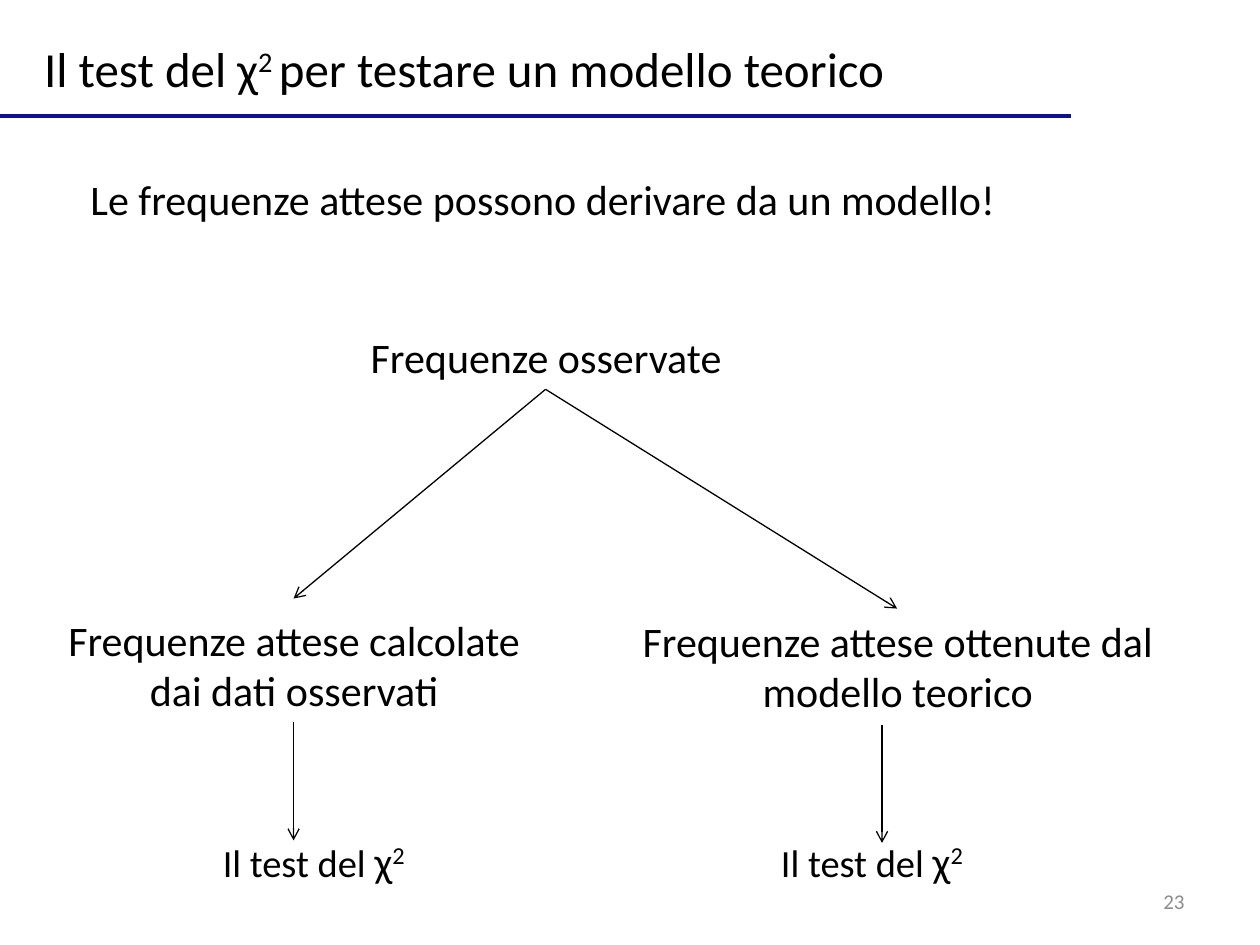
from dataclasses import dataclass

from lxml import etree
from pptx import Presentation
from pptx.dml.color import RGBColor
from pptx.enum.shapes import MSO_CONNECTOR
from pptx.enum.text import MSO_ANCHOR, MSO_AUTO_SIZE, PP_ALIGN
from pptx.oxml.ns import qn
from pptx.util import Inches, Pt

LEFT, CENTER, RIGHT = PP_ALIGN.LEFT, PP_ALIGN.CENTER, PP_ALIGN.RIGHT
TOP, MIDDLE = MSO_ANCHOR.TOP, MSO_ANCHOR.MIDDLE
FIT_SHAPE = MSO_AUTO_SIZE.SHAPE_TO_FIT_TEXT
STRAIGHT = MSO_CONNECTOR.STRAIGHT
TITLE_ONLY = 5


@dataclass(frozen=True)
class Theme:
    font: str = "Calibri"
    text: RGBColor = RGBColor(0x00, 0x00, 0x00)
    muted: RGBColor = RGBColor(0x8C, 0x8C, 0x8C)
    rule: RGBColor = RGBColor(0x0C, 0x12, 0x90)
    title_size: int = 28
    body_size: int = 24
    test_size: int = 22
    number_size: int = 12
    rule_width: float = 2
    arrow_width: float = 0.75


THEME = Theme()


def place(shape, box):
    """Set left, top, width and height in inches."""
    for name, value in zip(("left", "top", "width", "height"), box):
        setattr(shape, name, Inches(value))


def write_text(shape, runs, align=LEFT, anchor=MIDDLE, wrap=True, color=THEME.text):
    """Fill a shape with one paragraph of (text, size, superscript) runs."""
    frame = shape.text_frame
    frame_format = {"word_wrap": wrap, "auto_size": FIT_SHAPE, "vertical_anchor": anchor}
    for name, value in frame_format.items():
        setattr(frame, name, value)
    paragraph = frame.paragraphs[0]
    paragraph.alignment = align
    for text, size, superscript in runs:
        run = paragraph.add_run()
        run.text = text
        for name, value in {"name": THEME.font, "size": Pt(size)}.items():
            setattr(run.font, name, value)
        run.font.color.rgb = color
        if superscript:
            run._r.get_or_add_rPr().set("baseline", "30000")


def add_label(slide, box, runs, **text_format):
    shape = slide.shapes.add_textbox(*(Inches(value) for value in box))
    write_text(shape, runs, **text_format)


def add_line(slide, start, end, color, width, arrow=False):
    ends = (Inches(value) for value in (*start, *end))
    connector = slide.shapes.add_connector(STRAIGHT, *ends)
    connector.line.color.rgb = color
    connector.line.width = Pt(width)
    if arrow:
        etree.SubElement(connector.line._get_or_add_ln(), qn("a:tailEnd"), type="arrow")
    etree.SubElement(connector._element.spPr, qn("a:effectLst"))


def add_title(slide):
    title = slide.shapes.title
    place(title, (0.25, 0.25, 6.97, 0.57))
    size = THEME.title_size
    runs = [
        ("Il test del χ", size, False),
        ("2 ", size, True),
        ("per testare un modello teorico", size, False),
    ]
    write_text(title, runs, wrap=False)
    add_line(slide, (0, 0.92), (8.5, 0.92), THEME.rule, THEME.rule_width)


def add_branch(slide, text, box, tip, stem, test_left):
    """Add one path from the observed frequencies down to its test."""
    arrow_format = {"color": THEME.text, "width": THEME.arrow_width, "arrow": True}
    x, top = stem
    add_line(slide, (4.33, 3.09), tip, **arrow_format)
    add_label(slide, box, [(text, THEME.body_size, False)], align=CENTER)
    add_line(slide, stem, (x, top + 0.94), **arrow_format)
    test_runs = [
        ("Il test del ", THEME.test_size, False),
        ("χ", THEME.body_size, False),
        ("2", THEME.body_size, True),
    ]
    add_label(slide, (test_left, 6.58, 1.73, 0.5), test_runs, anchor=TOP, wrap=False)


def main():
    presentation = Presentation()
    presentation.slide_width = Inches(10)
    presentation.slide_height = Inches(7.5)
    slide = presentation.slides.add_slide(presentation.slide_layouts[TITLE_ONLY])

    # Heading and statement
    add_title(slide)
    statement = "Le frequenze attese possono derivare da un modello!"
    add_label(slide, (0.62, 1.33, 7.46, 0.5),
              [(statement, THEME.body_size, False)], wrap=False)

    # Tree from observed to expected frequencies
    add_label(slide, (2.75, 2.58, 3.17, 0.5),
              [("Frequenze osservate", THEME.body_size, False)], align=CENTER)
    add_branch(slide, "Frequenze attese calcolate dai dati osservati",
               (0.42, 4.82, 3.83, 0.91), (2.33, 4.75), (2.33, 5.73), 1.67)
    add_branch(slide, "Frequenze attese ottenute dal modello teorico",
               (4.75, 4.83, 4.75, 0.91), (7.12, 4.83), (7, 5.75), 6.1)

    # Slide number
    add_label(slide, (7.17, 6.95, 2.33, 0.4),
              [("23", THEME.number_size, False)], align=RIGHT, color=THEME.muted)

    presentation.save("out.pptx")


if __name__ == "__main__":
    main()
